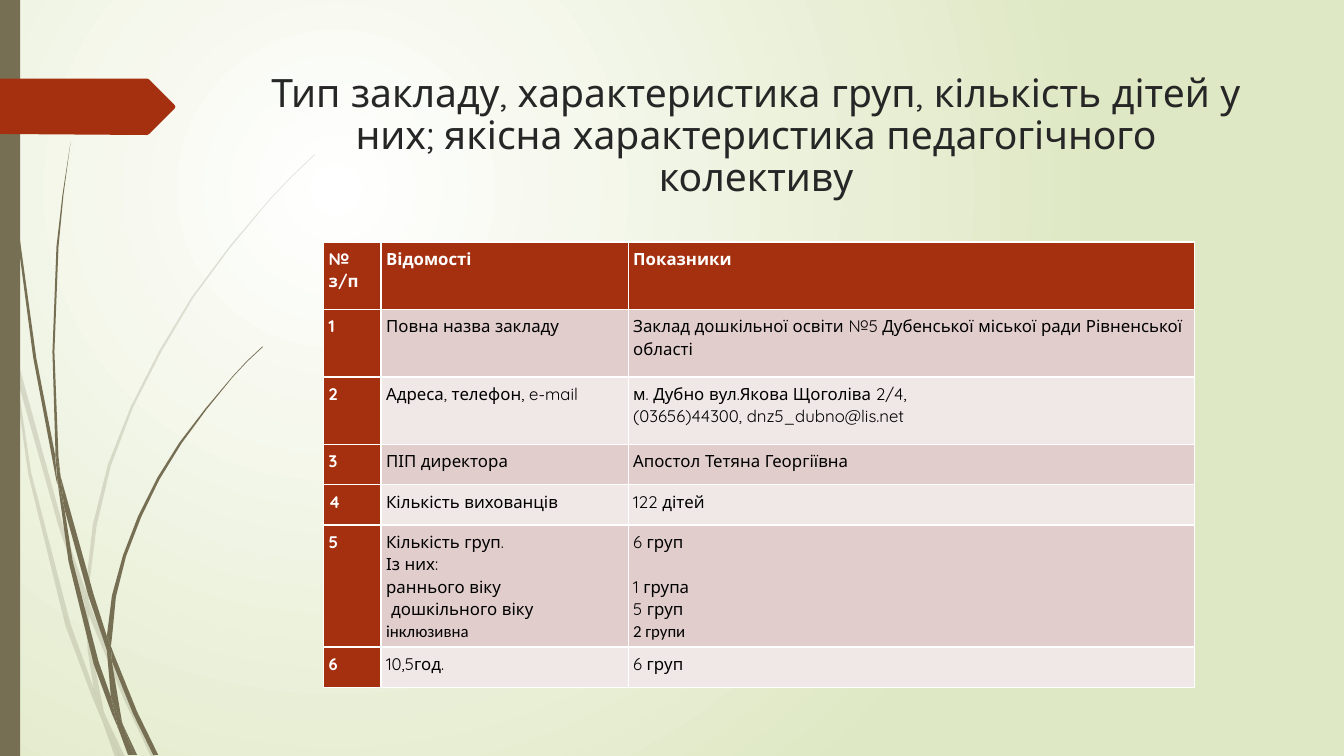
from lxml import etree
from pptx import Presentation
from pptx.dml.color import RGBColor
from pptx.enum.shapes import MSO_SHAPE
from pptx.enum.text import MSO_ANCHOR, PP_ALIGN
from pptx.oxml.ns import qn
from pptx.util import Inches, Pt

WHITE = RGBColor(0xFF, 0xFF, 0xFF)
BLACK = RGBColor(0x00, 0x00, 0x00)
INK = RGBColor(0x26, 0x26, 0x26)
SAGE = RGBColor(0xDF, 0xE8, 0xC4)
OLIVE = RGBColor(0x76, 0x6F, 0x54)
RUST = RGBColor(0xA5, 0x30, 0x10)
BANDS = (RGBColor(0xE1, 0xCD, 0xCC), RGBColor(0xF0, 0xE8, 0xE7))

TITLE = ("Тип закладу, характеристика груп, кількість дітей у них; "
         "якісна характеристика педагогічного колективу")
HEADINGS = ("№ з/п", "Відомості", "Показники")
FACTS = [
    (["Повна назва закладу"],
     ["Заклад дошкільної освіти №5 Дубенської міської ради Рівненської області"]),
    (["Адреса, телефон, e-mail"],
     ["м. Дубно вул.Якова Щоголіва 2/4,", "(03656)44300, dnz5_dubno@lis.net"]),
    (["ПІП директора"], ["Апостол Тетяна Георгіївна"]),
    (["Кількість вихованців"], ["122 дітей"]),
    (["Кількість груп.", "Із них:", "раннього віку", "дошкільного віку", "інклюзивна"],
     ["6 груп", "1 група", "5 груп", "2 групи"]),
    (["10,5год."], ["6 груп"]),
]
CALIBRI_LINES = {"інклюзивна", "2 групи"}
INDENTED_LINES = {"дошкільного віку": Inches(0.05)}
SPACED_LINES = {"1 група": Pt(16.2)}

COLUMNS = (0.57, 2.45, 5.62)
ROWS = (0.67, 0.67, 0.67, 0.4, 0.4, 1.21, 0.4)

# Outlines as (x, y) points in inches.
PALE_GRASS = [
    [(0.11, 3.5), (0.09, 3.22), (0, 2.82), (0, 2.99), (0.1, 3.44)],
    [(0.58, 5.22), (0.84, 5.99), (0.85, 5.86), (0.62, 5.2), (0.14, 3.45), (0.17, 3.76)],
    [(0.92, 6.07), (0.88, 5.96), (0.88, 6.1), (1.23, 6.94), (1.5, 7.51), (1.55, 7.51), (1.27, 6.92)],
    [(1.19, 7.51), (1.24, 7.51), (1.05, 7.11)],
    [(0.93, 6.83), (0.7, 6.19), (0.31, 4.69), (0.17, 3.76), (0.11, 3.5), (0.28, 4.7),
     (0.65, 6.21), (0.92, 6.93), (1.01, 7.14), (0.99, 7.07)],
    [(0.84, 5.99), (0.87, 6.46), (0.93, 6.83), (0.96, 6.92), (1.05, 7.11), (1.03, 7.06),
     (0.91, 6.46), (0.88, 6.1), (0.88, 6.08)],
    [(0.88, 5.84), (0.96, 5.21), (1.1, 4.62), (1.32, 4.04), (1.6, 3.49), (1.92, 2.95), (2.29, 2.45),
     (2.68, 1.98), (2.9, 1.75), (3.12, 1.54), (3.12, 1.53), (2.89, 1.75), (2.68, 1.97),
     (2.28, 2.44), (1.9, 2.95), (1.58, 3.48), (1.3, 4.03), (1.07, 4.61), (0.92, 5.21),
     (0.85, 5.84), (0.85, 5.86), (0.88, 5.96)],
    [(1.01, 7.14), (1.14, 7.51), (1.19, 7.51)],
    [(0.88, 6.08), (0.88, 6.1), (0.88, 5.96), (0.85, 5.86), (0.84, 5.99)],
    [(0.96, 6.92), (0.93, 6.83), (0.99, 7.07), (1.01, 7.14), (1.19, 7.51), (1.05, 7.11)],
]
DARK_GRASS = [
    [(0.07, 1.1), (0.17, 2.33), (0.33, 3.55), (0.56, 4.77), (0.57, 4.81), (0.55, 4.57), (0.55, 4.53),
     (0.36, 3.55), (0.19, 2.32), (0.08, 1.09), (0.05, 0.48), (0.04, 0), (0.03, 0), (0.04, 0.48)],
    [(0.88, 5.92), (1.06, 6.45), (1.06, 6.31), (0.93, 5.9), (0.6, 4.72), (0.64, 5.05)],
    [(1.13, 6.49), (1.1, 6.41), (1.11, 6.56), (1.32, 7.08), (1.52, 7.49), (1.57, 7.49), (1.36, 7.06)],
    [(1.1, 6.91), (0.98, 6.57), (0.72, 5.56), (0.64, 5.05), (0.57, 4.77), (0.68, 5.57),
     (0.93, 6.59), (1.11, 7.08), (1.17, 7.22), (1.16, 7.17)],
    [(0.6, 4.72), (0.58, 4.53), (0.54, 3.49), (0.58, 2.45), (0.63, 1.93), (0.7, 1.41),
     (0.62, 1.93), (0.56, 2.45), (0.52, 3.49), (0.55, 4.49)],
    [(1.33, 7.49), (1.36, 7.49), (1.22, 7.19)],
    [(0.57, 4.77), (0.64, 5.05), (0.6, 4.72), (0.55, 4.49), (0.55, 4.53)],
    [(1.11, 6.33), (1.15, 5.92), (1.25, 5.52), (1.4, 5.13), (1.58, 4.76), (1.8, 4.4), (2.05, 4.06),
     (2.31, 3.74), (2.45, 3.59), (2.61, 3.44), (2.6, 3.44), (2.45, 3.58), (2.31, 3.73),
     (2.04, 4.05), (1.78, 4.39), (1.56, 4.74), (1.37, 5.12), (1.22, 5.51), (1.11, 5.91),
     (1.06, 6.31), (1.1, 6.41)],
    [(1.17, 7.22), (1.27, 7.49), (1.31, 7.49)],
    [(1.06, 6.45), (1.1, 6.91), (1.16, 7.06), (1.22, 7.19), (1.21, 7.16), (1.11, 6.56), (1.09, 6.51)],
    [(1.06, 6.45), (1.09, 6.51), (1.11, 6.56), (1.1, 6.41), (1.06, 6.31)],
    [(1.16, 7.06), (1.1, 6.91), (1.16, 7.17), (1.17, 7.22), (1.3, 7.49), (1.33, 7.49), (1.22, 7.19)],
]
BANNER = [(0, 0.78), (1.46, 0.78), (1.48, 0.79), (1.73, 1.04), (1.74, 1.06),
          (1.73, 1.08), (1.48, 1.33), (1.46, 1.34), (0, 1.33)]


def paint(shape, colour):
    shape.shadow.inherit = False
    shape.fill.solid()
    shape.fill.fore_color.rgb = colour
    shape.line.fill.background()


def draw_outline(shapes, points, colour):
    start, *rest = [(Inches(x), Inches(y)) for x, y in points]
    builder = shapes.build_freeform(*start)
    builder.add_line_segments(rest, close=True)
    shape = builder.convert_to_shape()
    paint(shape, colour)
    return shape


def write(paragraph, text, colour, **font):
    run = paragraph.add_run()
    run.text = text
    run.font.color.rgb = colour
    for key, value in font.items():
        setattr(run.font, key, value)


def fill_cell(cell, lines, fill, colour, bold):
    for side in ("left", "top", "right", "bottom"):
        setattr(cell, f"margin_{side}", Inches(0.05))
    cell.fill.solid()
    cell.fill.fore_color.rgb = fill
    frame = cell.text_frame
    for i, line in enumerate(lines):
        paragraph = frame.add_paragraph() if i else frame.paragraphs[0]
        paragraph.line_spacing = 1.07
        if line in SPACED_LINES:
            paragraph.space_before = SPACED_LINES[line]
        if line in INDENTED_LINES:
            paragraph._p.get_or_add_pPr().set("marL", str(INDENTED_LINES[line]))
        write(paragraph, line, colour, size=Pt(12), bold=bold,
              name="Calibri" if line in CALIBRI_LINES else "Quicksand")


def add_background(slide):
    fill = slide.background.fill
    fill.gradient()
    for stop, colour, position in zip(fill.gradient_stops, (WHITE, SAGE), (0, 1)):
        stop.color.rgb, stop.position = colour, position
    gradient = slide.element.find(".//" + qn("a:gradFill"))
    gradient.remove(gradient.find(qn("a:lin")))
    circle = etree.SubElement(gradient, qn("a:path"), {"path": "circle"})
    etree.SubElement(circle, qn("a:fillToRect"), l="50000", t="50000", r="100000", b="100000")


def add_grass(slide):
    for outlines, opacity in ((PALE_GRASS, 20), (DARK_GRASS, 100)):
        tuft = slide.shapes.add_group_shape()
        for outline in outlines:
            blade = draw_outline(tuft.shapes, outline, OLIVE)
            if opacity < 100:
                colour = blade._element.spPr.find(qn("a:solidFill")).find(qn("a:srgbClr"))
                etree.SubElement(colour, qn("a:alpha"), val=str(opacity * 1000))


def add_title(slide):
    frame = slide.shapes.add_textbox(*map(Inches, (2.42, 0.68, 10.16, 1.4))).text_frame
    frame.word_wrap, frame.vertical_anchor = True, MSO_ANCHOR.TOP
    paragraph = frame.paragraphs[0]
    paragraph.alignment, paragraph.line_spacing = PP_ALIGN.CENTER, 0.9
    write(paragraph, TITLE, INK, size=Pt(27.9), name="Quicksand")


def add_facts(slide):
    """Fill the table; its default style draws the white rules."""
    table = slide.shapes.add_table(len(ROWS), len(COLUMNS), Inches(3.21), Inches(2.4),
                                   Inches(sum(COLUMNS)), Inches(sum(ROWS))).table
    for column, width in zip(table.columns, COLUMNS):
        column.width = Inches(width)
    for row, height in zip(table.rows, ROWS):
        row.height = Inches(height)
    for c, heading in enumerate(HEADINGS):
        fill_cell(table.cell(0, c), [heading], RUST, WHITE, True)
    for r, fact in enumerate(FACTS, 1):
        fill_cell(table.cell(r, 0), [str(r)], RUST, WHITE, True)
        for c, lines in enumerate(fact, 1):
            fill_cell(table.cell(r, c), lines, BANDS[(r - 1) % 2], BLACK, False)


def main():
    deck = Presentation()
    deck.slide_width, deck.slide_height = Inches(13.33), Inches(7.5)
    slide = deck.slides.add_slide(deck.slide_layouts[6])
    add_background(slide)
    add_grass(slide)
    paint(slide.shapes.add_shape(MSO_SHAPE.RECTANGLE, 0, 0, Inches(0.2), deck.slide_height), OLIVE)
    draw_outline(slide.shapes, BANNER, RUST)
    add_title(slide)
    add_facts(slide)
    deck.save("out.pptx")


if __name__ == "__main__":
    main()
